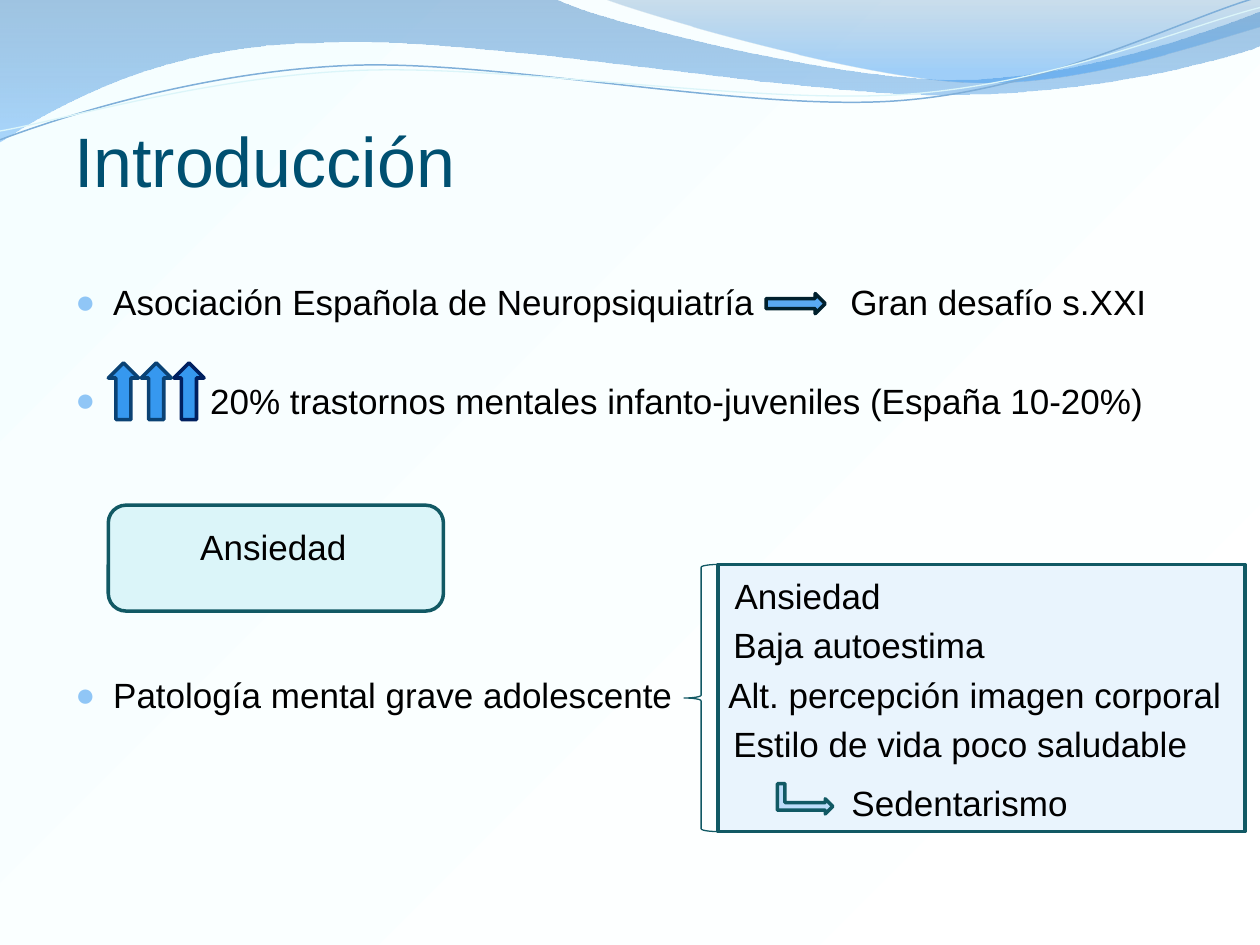
from lxml import etree
from pptx import Presentation
from pptx import util as u
from pptx.dml.color import RGBColor
from pptx.enum import shapes, text
from pptx.oxml.ns import qn

COLS, ROWS = 10, 7.5
CELL = u.Inches(1)
FONT = "Arial"
PITCH, LINE = 28, 23.8  # points from row to row, and height of one line
KIND = shapes.MSO_SHAPE

HUE = {
    "paper": "FFFFFF", "mist": "F5FEFF", "title": "005071", "ink": "000000",
    "bullet": "90C6F6", "teal": "115964", "panel": "E9F4FD", "aqua": "DBF5F9",
    "up": "3698EF", "navy": "0A4274", "night": "002060",
    "right": "59A9F2", "dark": "00202D", "bent": "BCDDFA",
    "deep": "377EBE", "sky": "69B5F9", "steel": "5F93C1", "azure": "3496F1",
    "thread": "7FAFD9",
}

# Pairs are straight steps, groups of six are cubic curves.
WAVE = [
    (0, -0.01), (4.4, -0.01), (4.76, 0.17, 6.64, 0.63, 7.58, 0.63),
    (8.53, 0.63, 9.58, 0.26, 10, 0.09), (10.01, 0.36),
    (9.83, 0.44, 8.7, 0.76, 7.46, 0.75), (6.22, 0.75, 3.82, 0.28, 2.57, 0.34),
    (1.29, 0.35, 0.46, 0.83, -0.01, 1.13),
]
CREST = [
    (4.79, -0.01), (5.09, 0.11, 6.82, 0.62, 7.69, 0.65),
    (8.56, 0.69, 9.61, 0.32, 10, 0.21), (10, 0),
]
THREADS = [
    ("thread", 0.85, [
        (0, 1.11), (0.48, 0.93, 1.58, 0.57, 2.77, 0.52),
        (3.95, 0.47, 5.93, 0.89, 7.13, 0.8), (8.33, 0.71, 9.38, 0.15, 9.98, -0.02)]),
    ("aqua", 0.75, [
        (0, 1.04), (0.47, 0.96, 1.64, 0.61, 2.83, 0.56),
        (4.03, 0.51, 5.97, 0.83, 7.17, 0.75), (8.36, 0.67, 9.41, 0.21, 10, 0.06)]),
]

# Row skip, indent in columns, wording
POINTS = [
    (0, 0.3, "Asociación Española de Neuropsiquiatría"),
    (2, 1.07, "20% trastornos mentales infanto-juveniles (España 10-20%)"),
    (6, 0.3, "Patología mental grave adolescente"),
]
# Indent in columns, wording
SIGNS = [
    (0.05, "Ansiedad"),
    (0.04, "Baja autoestima"),
    (0, "Alt. percepción imagen corporal"),
    (0.04, "Estilo de vida poco saludable"),
]


def rgb(name):
    return RGBColor.from_string(HUE[name])


def grid(*cells):
    return [round(c * CELL) for c in cells]


def shade(fill, stops, angle):
    """Set a two-stop gradient; stops are (position, colour name)."""
    fill.gradient()
    fill.gradient_angle = angle
    for stop, (place, name) in zip(fill.gradient_stops, stops):
        stop.position = place
        stop.color.rgb = rgb(name)


def curve(slide, path, closed):
    """Lay all points as a polygon, then join each group of six into a cubic."""
    spots = [grid(*part[i:i + 2]) for part in path for i in range(0, len(part), 2)]
    pen = slide.shapes.build_freeform(*spots[0], scale=1.0)
    pen.add_line_segments(spots[1:], close=closed)
    shape = pen.convert_to_shape()
    shape.shadow.inherit = False
    steps = iter(list(shape._element.spPr.iter(qn("a:lnTo"))))
    for part in path[1:]:
        first, *rest = [next(steps) for _ in range(len(part) // 2)]
        if rest:
            cubic = etree.Element(qn("a:cubicBezTo"))
            first.addprevious(cubic)
            for step in (first, *rest):
                cubic.append(step[0])
                step.getparent().remove(step)
    return shape


def band(slide, path, stops, alphas):
    shape = curve(slide, path, True)
    shade(shape.fill, stops, 270)
    for tone, alpha in zip(shape._element.spPr.iter(qn("a:srgbClr")), alphas):
        etree.SubElement(tone, qn("a:alpha"), val=str(alpha * 1000))
    shape.line.fill.background()


def thread(slide, name, width, path):
    shape = curve(slide, path, False)
    shape.fill.background()
    shape.line.color.rgb = rgb(name)
    shape.line.width = u.Pt(width)


def block(slide, kind, area, fill, edge, width=2, turn=0):
    shape = slide.shapes.add_shape(kind, *grid(*area))
    shape.shadow.inherit = False
    shape.rotation = turn
    if fill:
        shape.fill.solid()
        shape.fill.fore_color.rgb = rgb(fill)
    else:
        shape.fill.background()
    shape.line.color.rgb = rgb(edge)
    shape.line.width = u.Pt(width)
    return shape


def write(shape, lines, size=20, hue="ink", align=text.PP_ALIGN.LEFT,
          anchor=text.MSO_ANCHOR.TOP, pad=(0.1, 0.05, 0, 0), after=0):
    """Fill a shape with paragraphs; pad is left, top, right, bottom."""
    frame = shape.text_frame
    frame.word_wrap = True
    frame.vertical_anchor = anchor
    (frame.margin_left, frame.margin_top,
     frame.margin_right, frame.margin_bottom) = grid(*pad)
    frame.text = "\n".join(lines)
    for para in frame.paragraphs:
        para.alignment = align
        para.space_after = u.Pt(after)
        for run in para.runs:
            run.font.name = FONT
            run.font.size = u.Pt(size)
            run.font.color.rgb = rgb(hue)
    return frame


def label(slide, area, lines, **look):
    return write(slide.shapes.add_textbox(*grid(*area)), lines, **look)


def inset(para, left, hang=0):
    props = para._p.get_or_add_pPr()
    for name, size in zip(("marL", "indent"), grid(left, -hang)):
        props.set(name, str(size))
    return props


def bullet(para, indent):
    props = inset(para, indent, indent)
    tone = etree.SubElement(props, qn("a:buClr"))
    etree.SubElement(tone, qn("a:srgbClr"), val=HUE["bullet"])
    etree.SubElement(props, qn("a:buSzPct"), val="95000")
    etree.SubElement(props, qn("a:buFont"), typeface=FONT)
    etree.SubElement(props, qn("a:buChar"), char="●")


def points(slide):
    frame = label(slide, (0.5, 2.18, 9.4, 3.6), [p[2] for p in POINTS])
    for para, (skip, indent, _) in zip(frame.paragraphs, POINTS):
        para.space_before = u.Pt(skip * PITCH - LINE if skip else 0)
        bullet(para, indent)


def signs(slide):
    panel = block(slide, KIND.RECTANGLE, (5.7, 4.48, 4.18, 2.12), "panel", "teal")
    frame = write(panel, [s[1] for s in SIGNS], pad=(0.08, 0.08, 0, 0), after=PITCH - LINE)
    for para, (indent, _) in zip(frame.paragraphs, SIGNS):
        inset(para, indent)


def main():
    deck = Presentation()
    deck.slide_width, deck.slide_height = grid(COLS, ROWS)
    slide = deck.slides.add_slide(deck.slide_layouts[6])
    shade(slide.background.fill, [(0, "paper"), (1, "mist")], 135)

    band(slide, WAVE, [(0, "deep"), (1, "sky")], (45, 55))
    band(slide, CREST, [(0, "steel"), (0.8, "azure")], (30, 45))
    for item in THREADS:
        thread(slide, *item)

    signs(slide)
    card = block(slide, KIND.ROUNDED_RECTANGLE, (0.86, 4.01, 2.66, 0.84), "aqua", "teal")
    write(card, ["Ansiedad"], align=text.PP_ALIGN.CENTER,
          anchor=text.MSO_ANCHOR.MIDDLE, pad=(0, 0, 0.04, 0.18))

    label(slide, (0.49, 0.88, 3.26, 0.77), ["Introducción"], size=40, hue="title")
    points(slide)
    label(slide, (6.65, 2.18, 3.2, 0.42), ["Gran desafío s.XXI"])

    for i, edge in enumerate(["night", "navy", "navy"]):
        block(slide, KIND.UP_ARROW, (1.38 - 0.26 * i, 2.88, 0.24, 0.45), "up", edge)
    block(slide, KIND.RIGHT_ARROW, (6.08, 2.33, 0.47, 0.16), "right", "dark")
    block(slide, KIND.LEFT_BRACE, (5.43, 4.48, 0.27, 2.12), None, "teal", 0.75)
    block(slide, KIND.BENT_UP_ARROW, (6.27, 6.12, 0.24, 0.44), "bent", "teal", turn=90)
    label(slide, (6.66, 6.15, 3.2, 0.42), ["Sedentarismo"])

    deck.save("out.pptx")


if __name__ == "__main__":
    main()
